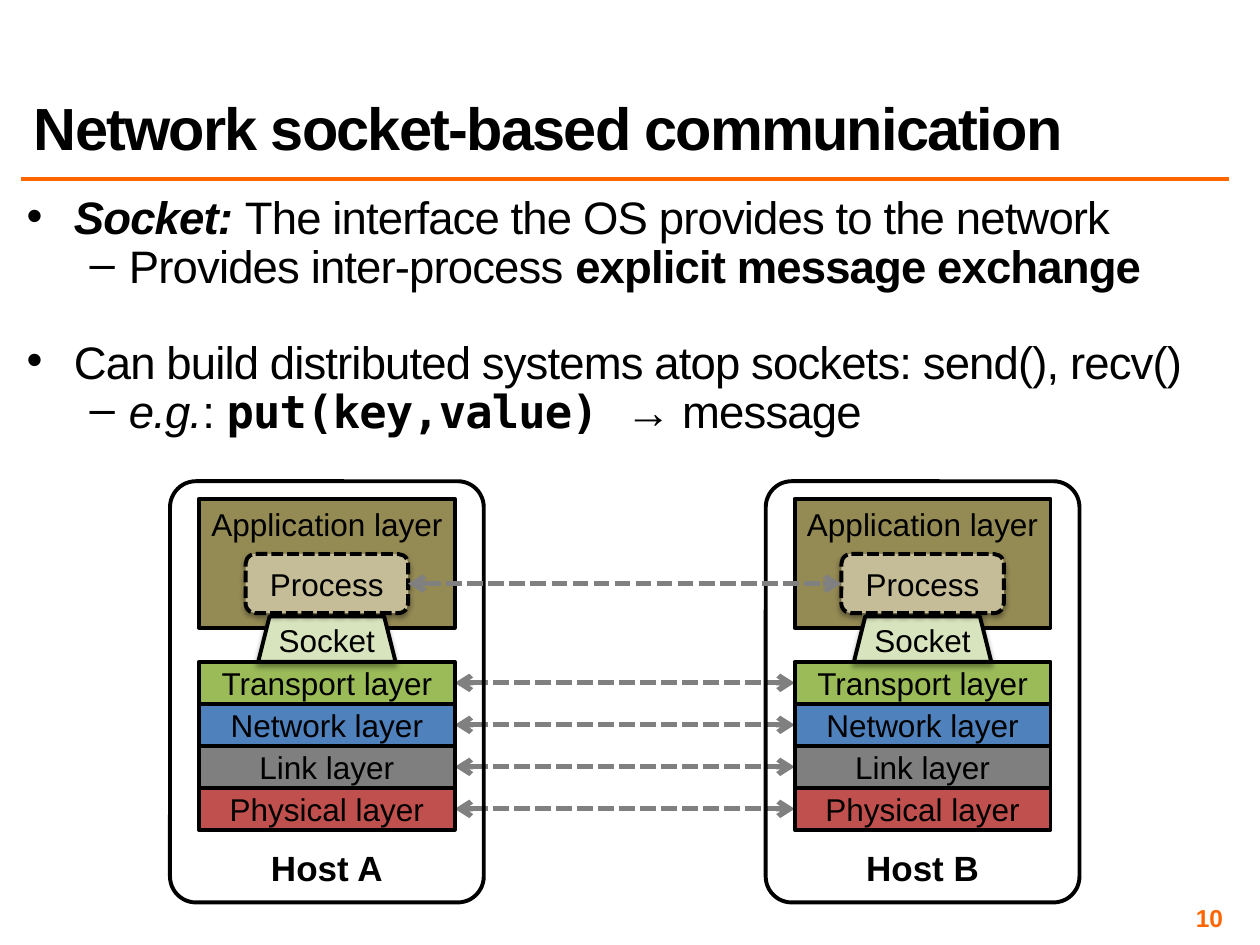
"""Build a slide on socket-based communication between two layered hosts."""
import pptx
import pptx.dml.color
import pptx.enum.dml
import pptx.enum.shapes
import pptx.enum.text
import pptx.oxml
import pptx.oxml.ns
import pptx.util
from lxml import etree

Pt = pptx.util.Pt
SHAPE = pptx.enum.shapes.MSO_SHAPE
ALIGN = pptx.enum.text.PP_ALIGN
ANCHOR = pptx.enum.text.MSO_ANCHOR
DASH = pptx.enum.dml.MSO_LINE.SQUARE_DOT

THEME = {
    "font": "Arial", "code_font": "DejaVu Sans Mono",
    "ink": "000000", "accent": "FF6600", "arrow": "808080",
    "application": "948A54", "process": "C4BD97", "socket": "D7E4BD",
    "title": 34, "body": 26, "host": 20, "layer": 18, "number": 14,
}

TITLE = "Network socket-based communication"
PAGE_NUMBER = "10"
BULLETS = [
    (0, 6, [("Socket: ", {"bold": True, "italic": True}),
            ("The interface the OS provides to the network", {})]),
    (1, 6, [("Provides inter-process ", {}),
            ("explicit message exchange", {"bold": True})]),
    (0, 33, [("Can build distributed systems atop sockets: send(), recv()", {})]),
    (1, 6, [("e.g.", {"italic": True}), (": ", {}),
            ("put(key,value) ", {"bold": True, "font": THEME["code_font"]}),
            ("→ message", {})]),
]
BULLET_STYLES = [("•", 27, -27), ("–", 58.5, -22.5)]
HOSTS = ["Host A", "Host B"]
LAYERS = [("Transport layer", "9BBB59"), ("Network layer", "4F81BD"),
          ("Link layer", "7F7F7F"), ("Physical layer", "C0504D")]

HOST_CENTERS = [186.8, 527.2]
HOST_WIDTH, LAYER_WIDTH, PROCESS_WIDTH, SOCKET_WIDTH = 179.3, 146.2, 92.9, 78.5
LAYERS_TOP, LAYER_HEIGHT = 378.2, 24
PROCESS_TOP, PROCESS_HEIGHT = 316.6, 33.8


def rgb(color):
    """Turn a hex string into a colour."""
    return pptx.dml.color.RGBColor.from_string(color)


def write(paragraph, text, size, color=THEME["ink"], font=THEME["font"],
          bold=False, italic=False, tracking=0, align=None, leading=None):
    """Add a formatted run to a paragraph."""
    run = paragraph.add_run()
    run.text = text
    run.font.size, run.font.name = Pt(size), font
    run.font.bold, run.font.italic = bold, italic
    run.font.color.rgb = rgb(color)
    if tracking:
        run.font._element.set("spc", str(int(tracking * 100)))
    if align is not None:
        paragraph.alignment = align
    if leading is not None:
        paragraph.line_spacing = leading


def set_frame(frame, anchor, wrap=True, inset=None):
    """Set the anchor, wrapping and insets of a text frame."""
    frame.auto_size = pptx.enum.text.MSO_AUTO_SIZE.NONE
    frame.vertical_anchor, frame.word_wrap = anchor, wrap
    if inset is not None:
        frame.margin_left = frame.margin_right = Pt(inset)
        frame.margin_top = frame.margin_bottom = Pt(inset)


def add_text_box(slide, left, top, width, height, anchor):
    """Add a text box with narrow insets and return its frame."""
    frame = slide.shapes.add_textbox(Pt(left), Pt(top), Pt(width), Pt(height)).text_frame
    set_frame(frame, anchor, inset=3)
    return frame


def add_line(slide, x1, x2, y, color, weight, arrows=False):
    """Draw a horizontal line, dashed and two-headed for arrows."""
    line = slide.shapes.add_connector(
        pptx.enum.shapes.MSO_CONNECTOR.STRAIGHT, Pt(x1), Pt(y), Pt(x2), Pt(y))
    line.line.color.rgb, line.line.width = rgb(color), Pt(weight)
    properties = line._element.spPr
    if arrows:
        line.line.dash_style = DASH
        outline = properties.find(pptx.oxml.ns.qn("a:ln"))
        for end in ("a:headEnd", "a:tailEnd"):
            etree.SubElement(outline, pptx.oxml.ns.qn(end), type="arrow")
    etree.SubElement(properties, pptx.oxml.ns.qn("a:effectLst"))


def add_block(slide, kind, center, top, width, height, text, fill=None,
              anchor=ANCHOR.MIDDLE, wrap=True, size=THEME["layer"], bold=False,
              dashed=False, shadow=False, corner=None):
    """Draw a labelled block centred on its host."""
    block = slide.shapes.add_shape(
        kind, Pt(center - width / 2), Pt(top), Pt(width), Pt(height))
    block.shadow.inherit = False
    if corner is not None:
        block.adjustments[0] = corner
    if fill:
        block.fill.solid()
        block.fill.fore_color.rgb = rgb(fill)
    else:
        block.fill.background()
    block.line.color.rgb, block.line.width = rgb(THEME["ink"]), Pt(2.25)
    if dashed:
        block.line.dash_style = DASH
    if shadow:
        effects = block._element.spPr.find(pptx.oxml.ns.qn("a:effectLst"))
        effects.append(pptx.oxml.parse_xml(
            f'<a:outerShdw {pptx.oxml.ns.nsdecls("a")} blurRad="{Pt(3.1)}" '
            f'dist="{Pt(1.8)}" dir="5400000" rotWithShape="0">'
            f'<a:srgbClr val="{THEME["ink"]}"><a:alpha val="35000"/></a:srgbClr>'
            '</a:outerShdw>'))
    set_frame(block.text_frame, anchor, wrap)
    write(block.text_frame.paragraphs[0], text, size, bold=bold, align=ALIGN.CENTER)


def add_bullets(slide):
    """Write the two-level bullet list."""
    frame = add_text_box(slide, 12.2, 113.8, 689.8, 151.9, ANCHOR.TOP)
    for index, (level, gap, runs) in enumerate(BULLETS):
        paragraph = frame.add_paragraph() if index else frame.paragraphs[0]
        paragraph.level, paragraph.space_before = level, Pt(gap)
        for text, style in runs:
            write(paragraph, text, THEME["body"], tracking=-0.5, leading=0.7, **style)
        mark, margin, indent = BULLET_STYLES[level]
        properties = paragraph._p.get_or_add_pPr()
        properties.set("marL", str(Pt(margin)))
        properties.set("indent", str(Pt(indent)))
        etree.SubElement(properties, pptx.oxml.ns.qn("a:buFont"), typeface=THEME["font"])
        etree.SubElement(properties, pptx.oxml.ns.qn("a:buChar"), char=mark)


def add_host(slide, name, center):
    """Draw one host with its layer stack, socket and process."""
    add_block(slide, SHAPE.RECTANGLE, center, 285.1, LAYER_WIDTH, 73.6,
              "Application layer", THEME["application"], ANCHOR.TOP, wrap=False)
    for index, (layer, color) in enumerate(LAYERS):
        add_block(slide, SHAPE.RECTANGLE, center, LAYERS_TOP + index * LAYER_HEIGHT,
                  LAYER_WIDTH, LAYER_HEIGHT, layer, color, wrap=False)
    add_block(slide, SHAPE.ROUNDED_RECTANGLE, center, 275, HOST_WIDTH, 240.7, name,
              anchor=ANCHOR.BOTTOM, size=THEME["host"], bold=True, corner=0.083)
    add_block(slide, SHAPE.TRAPEZOID, center, 352.2, SOCKET_WIDTH, 26, "Socket",
              THEME["socket"], shadow=True)
    add_block(slide, SHAPE.FLOWCHART_ALTERNATE_PROCESS, center, PROCESS_TOP,
              PROCESS_WIDTH, PROCESS_HEIGHT, "Process", THEME["process"],
              dashed=True, shadow=True)


def add_link(slide, block_width, y):
    """Join the facing edges of matching blocks on both hosts."""
    left, right = HOST_CENTERS
    add_line(slide, left + block_width / 2, right - block_width / 2, y,
             THEME["arrow"], 3, arrows=True)


def main():
    """Assemble and save the slide."""
    deck = pptx.Presentation()
    deck.slide_width, deck.slide_height = Pt(720), Pt(540)
    slide = deck.slides.add_slide(deck.slide_layouts[5])

    title = slide.shapes.title
    title.left, title.top, title.width, title.height = Pt(12.2), Pt(12.2), Pt(689.8), Pt(84)
    set_frame(title.text_frame, ANCHOR.BOTTOM)
    write(title.text_frame.paragraphs[0], TITLE, THEME["title"], bold=True,
          tracking=-1, align=ALIGN.LEFT, leading=0.8)
    add_line(slide, 12.2, 702, 102.2, THEME["accent"], 2)
    add_bullets(slide)
    number = add_text_box(slide, 534.2, 516.2, 167.8, 16.6, ANCHOR.MIDDLE)
    write(number.paragraphs[0], PAGE_NUMBER, THEME["number"], THEME["accent"],
          bold=True, align=ALIGN.RIGHT)

    for index in range(len(LAYERS)):
        add_link(slide, LAYER_WIDTH, LAYERS_TOP + (index + 0.5) * LAYER_HEIGHT)
    for name, center in zip(HOSTS, HOST_CENTERS):
        add_host(slide, name, center)
    add_link(slide, PROCESS_WIDTH, PROCESS_TOP + PROCESS_HEIGHT / 2)
    deck.save("out.pptx")


if __name__ == "__main__":
    main()
